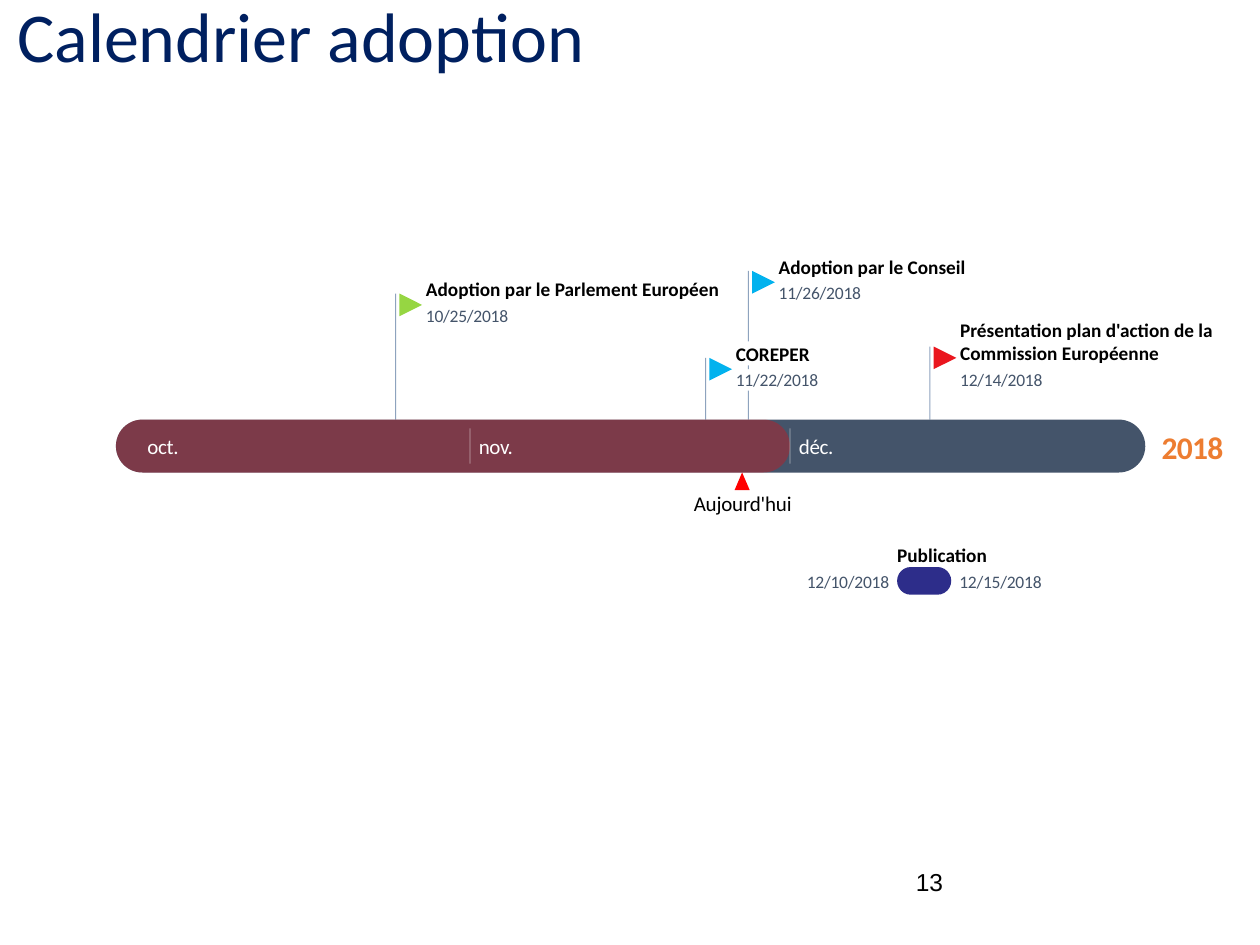
from dataclasses import dataclass

from lxml import etree
from pptx import Presentation
from pptx.dml.color import RGBColor
from pptx.enum.shapes import MSO_CONNECTOR, MSO_SHAPE
from pptx.enum.text import MSO_ANCHOR, PP_ALIGN
from pptx.oxml.ns import qn
from pptx.util import Inches, Pt

STRAIGHT = MSO_CONNECTOR.STRAIGHT
ROUNDED = MSO_SHAPE.ROUNDED_RECTANGLE
TRIANGLE = MSO_SHAPE.ISOSCELES_TRIANGLE
FLAG = MSO_SHAPE.FLOWCHART_MERGE
TOP, MIDDLE = MSO_ANCHOR.TOP, MSO_ANCHOR.MIDDLE
LEFT, CENTER = PP_ALIGN.LEFT, PP_ALIGN.CENTER


@dataclass(frozen=True)
class Theme:
    """Colours, fonts and type sizes of the slide."""
    font: str = "Calibri"
    number_font: str = "Arial"
    title: str = "002060"
    text: str = "000000"
    white: str = "FFFFFF"
    slate: str = "44546A"
    stem: str = "1F497E"
    year: str = "ED7D31"
    today: str = "FF0000"
    parliament: str = "96D642"
    council: str = "02B2EE"
    commission: str = "EA161E"
    publication: str = "2D2D8A"
    title_size: int = 40
    year_size: int = 18
    number_size: int = 14
    month_size: int = 12
    name_size: int = 11
    date_size: int = 10


THEME = Theme()
BAND_LEFT, BAND_TOP, BAND_HEIGHT = 0.92, 3.33, 0.42
FLAG_SIZE = 0.18
NAME_HEIGHT, DATE_WIDTH, DATE_HEIGHT = 0.19, 0.68, 0.17

MILESTONES = [
    (7.38, 2.75, [(2.75, BAND_TOP)], THEME.commission,
     "Présentation plan d'action de la Commission Européenne", "12/14/2018", 2.04, 2),
    (5.94, 2.15, [(3.1, BAND_TOP), (2.9, 2.93), (2.15, 2.71)], THEME.council,
     "Adoption par le Conseil", "11/26/2018", 1.55, 1),
    (5.6, 2.84, [(2.84, BAND_TOP)], THEME.council,
     "COREPER", "11/22/2018", 0.65, 1),
    (3.14, 2.33, [(2.33, BAND_TOP)], THEME.parliament,
     "Adoption par le Parlement Européen", "10/25/2018", 2.45, 1),
]
MONTHS = [("oct.", 1.17, 0.25), ("nov.", 3.8, 0.28), ("déc.", 6.34, 0.28)]
MONTH_STARTS = [3.73, 6.27]


def add_alpha(fill_parent, percent):
    """Make the solid fill inside an element partly transparent."""
    color = next(fill_parent.iter(qn("a:srgbClr")))
    etree.SubElement(color, qn("a:alpha")).set("val", str(percent * 1000))


def add_text(slide, text, box, size, color, font=THEME.font, bold=False,
             spacing=0, align=LEFT, anchor=MIDDLE, inset=0, wrap=False):
    """Add a text box holding one formatted run."""
    shape = slide.shapes.add_textbox(*map(Inches, box))
    frame = shape.text_frame
    frame.word_wrap = wrap
    frame.vertical_anchor = anchor
    frame.margin_left = frame.margin_right = Inches(inset)
    frame.margin_top = frame.margin_bottom = Inches(inset / 2)
    frame.text = text
    paragraph = frame.paragraphs[0]
    paragraph.alignment = align
    run = paragraph.runs[0]
    run.font.name = font
    run.font.size = Pt(size)
    run.font.bold = bold
    run.font.color.rgb = RGBColor.from_string(color)
    if spacing:
        run._r.get_or_add_rPr().set("spc", str(round(spacing * 100)))


def add_block(slide, kind, box, color, alpha=None):
    """Add a filled preset shape without outline, fully rounded if a bar."""
    shape = slide.shapes.add_shape(kind, *map(Inches, box))
    shape.shadow.inherit = False
    shape.fill.solid()
    shape.fill.fore_color.rgb = RGBColor.from_string(color)
    shape.line.fill.background()
    if kind == ROUNDED:
        shape.adjustments[0] = 0.5
    if alpha:
        add_alpha(shape._element.spPr, alpha)
    return shape


def add_vertical(slide, x, top, bottom, color, width, alpha):
    """Add a translucent vertical line."""
    line = slide.shapes.add_connector(
        STRAIGHT, Inches(x), Inches(top), Inches(x), Inches(bottom))
    line.line.color.rgb = RGBColor.from_string(color)
    line.line.width = Pt(width)
    properties = line._element.spPr
    add_alpha(properties, alpha)
    etree.SubElement(properties, qn("a:effectLst"))


def add_name(slide, text, left, top, width, lines=1):
    """Add the bold name of an event."""
    add_text(slide, text, (left, top, width, NAME_HEIGHT * lines),
             THEME.name_size, THEME.text, bold=True, wrap=lines > 1)


def add_date(slide, text, left, top, align=LEFT):
    """Add the small date of an event."""
    add_text(slide, text, (left, top, DATE_WIDTH, DATE_HEIGHT),
             THEME.date_size, THEME.slate, spacing=-0.1, align=align)


def add_milestone(slide, x, top, color, name, date, width, lines):
    """Add a flag with its name and date beside a stem."""
    label_left = x + 0.24
    date_top = top + 0.09 * lines
    name_top = date_top - 0.03 - NAME_HEIGHT * lines
    add_name(slide, name, label_left, name_top, width, lines)
    add_date(slide, date, label_left, date_top)
    flag = add_block(slide, FLAG, (x + 0.03, top, FLAG_SIZE, FLAG_SIZE), color)
    flag.rotation = 270


def add_band(slide):
    """Add the timeline bar with its elapsed part, months and today marker."""
    add_text(slide, "2018", (9.22, 3.39, 0.49, 0.31), THEME.year_size,
             THEME.year, bold=True, spacing=-0.4, align=CENTER)
    add_block(slide, ROUNDED, (BAND_LEFT, BAND_TOP, 8.17, BAND_HEIGHT), THEME.slate)
    add_block(slide, ROUNDED, (BAND_LEFT, BAND_TOP, 5.35, BAND_HEIGHT),
              THEME.today, alpha=30)
    add_block(slide, TRIANGLE, (5.83, BAND_TOP + BAND_HEIGHT, 0.12, 0.14), THEME.today)
    add_text(slide, "Aujourd'hui", (5.49, 3.89, 0.81, 0.2), THEME.month_size,
             THEME.text, spacing=-0.1, align=CENTER)
    for x in MONTH_STARTS:
        add_vertical(slide, x, 3.4, 3.68, THEME.white, 0.75, 30)
    for month, left, width in MONTHS:
        add_text(slide, month, (left, 3.44, width, 0.2), THEME.month_size,
                 THEME.white, spacing=-0.2)


def add_publication(slide):
    """Add the publication period below the timeline."""
    left, width, date_top = 7.12, 0.43, 4.53
    add_block(slide, ROUNDED, (left, 4.5, width, 0.22), THEME.publication)
    add_name(slide, "Publication", left, 4.31, 0.75)
    add_date(slide, "12/10/2018", left - 0.05 - DATE_WIDTH, date_top, CENTER)
    add_date(slide, "12/15/2018", left + width + 0.05, date_top, CENTER)


def main():
    """Build and save the slide."""
    presentation = Presentation()
    presentation.slide_width, presentation.slide_height = Inches(10), Inches(7.5)
    slide = presentation.slides.add_slide(presentation.slide_layouts[6])
    for x, _, stems, *_ in MILESTONES:
        for top, bottom in stems:
            add_vertical(slide, x, top, bottom, THEME.stem, 0.6, 50)
    add_text(slide, "13", (7.17, 6.83, 1.53, 0.5), THEME.number_size, THEME.text,
             font=THEME.number_font, anchor=TOP, inset=0.1, wrap=True)
    add_band(slide)
    for x, top, _, *details in MILESTONES:
        add_milestone(slide, x, top, *details)
    add_publication(slide)
    add_text(slide, "Calendrier adoption", (0.04, -0.11, 9.76, 0.61),
             THEME.title_size, THEME.title, anchor=TOP, inset=0.1, wrap=True)
    presentation.save("out.pptx")


if __name__ == "__main__":
    main()
